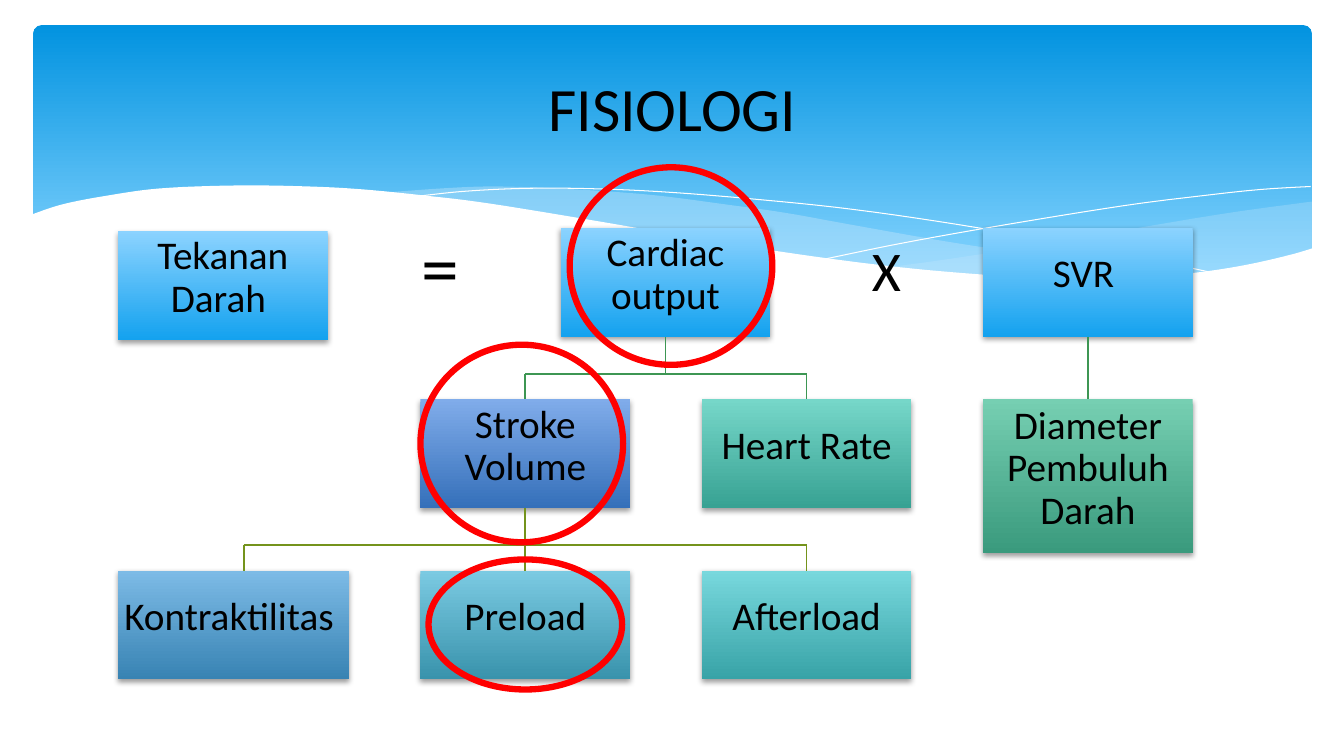
from itertools import chain
from lxml import etree
from pptx import Presentation
from pptx.dml.color import RGBColor
from pptx.enum.shapes import MSO_CONNECTOR as Connector, MSO_SHAPE as Preset
from pptx.enum.text import MSO_ANCHOR as Anchor, PP_ALIGN as Align
from pptx.oxml.ns import qn
from pptx.util import Pt

PX = 9144  # 100 px to the inch
FONT = "Calibri"
BLACK = RGBColor(0, 0, 0)
WHITE = RGBColor(255, 255, 255)
RED = RGBColor(255, 0, 0)
PALE = RGBColor(0xC6, 0xE7, 0xFC)
GREEN = RGBColor(0x3D, 0x96, 0x53)
OLIVE = RGBColor(0x74, 0x93, 0x1C)
SKY = (RGBColor(0x02, 0x93, 0xE0), RGBColor(0x83, 0xD3, 0xFE))
AZURE = (RGBColor(0x8C, 0xD3, 0xFF), RGBColor(0x14, 0xA2, 0xEF))
INDIGO = (RGBColor(0x80, 0xAC, 0xEA), RGBColor(0x35, 0x70, 0xBA))
STEEL = (RGBColor(0x7D, 0xBB, 0xE6), RGBColor(0x38, 0x83, 0xB3))
TEAL = (RGBColor(0x7B, 0xCA, 0xE2), RGBColor(0x39, 0x93, 0xAC))
CYAN = (RGBColor(0x78, 0xD8, 0xDD), RGBColor(0x38, 0xA3, 0xA7))
AQUA = (RGBColor(0x76, 0xD7, 0xC9), RGBColor(0x38, 0xA2, 0x93))
MINT = (RGBColor(0x76, 0xCF, 0xB2), RGBColor(0x3A, 0x9A, 0x7D))

TITLE = "FISIOLOGI"
BOX_W, BOX_H = 208, 108
ROWS = (226, 396, 566)
LEFT, STROKE_X, CARDIAC_X, RATE_X, SVR_X = 117, 417, 556, 696, 975
BOXES = {  # text: (x, y, width, height, gradient)
    "Tekanan Darah ": (LEFT, 229, BOX_W, BOX_H, AZURE),
    "Cardiac output": (CARDIAC_X, ROWS[0], BOX_W, BOX_H, AZURE),
    "Stroke Volume": (STROKE_X, ROWS[1], BOX_W, BOX_H, INDIGO),
    "Kontraktilitas ": (LEFT, ROWS[2], 229, BOX_H, STEEL),
    "Preload": (STROKE_X, ROWS[2], BOX_W, BOX_H, TEAL),
    "Afterload": (RATE_X, ROWS[2], BOX_W, BOX_H, CYAN),
    "Heart Rate": (RATE_X, ROWS[1], BOX_W, BOX_H, AQUA),
    "SVR ": (SVR_X, ROWS[0], BOX_W, BOX_H, AZURE),
    "Diameter Pembuluh Darah": (SVR_X, ROWS[1], BOX_W, 153, MINT),
}
BRANCHES = [  # parent, colour, {child: x where its line lands}
    ("SVR ", GREEN, {"Diameter Pembuluh Darah": 1079}),
    ("Cardiac output", GREEN, {"Stroke Volume": 521, "Heart Rate": 800}),
    ("Stroke Volume", OLIVE,
     {"Kontraktilitas ": 242, "Preload": 521, "Afterload": 800}),
]
BUS_DROP = 37
OPERATORS = [("=", 54, 408, 213, 78, 101), ("X", 40, 855, 229, 64, 77)]
RINGS = [(425, 555, 192, 129), (565, 166, 201, 196), (417, 342, 201, 196)]

RIGHT_BAND = [
    [(1301, 200), (1227, 210), (1147, 223), (1038, 242), (941, 257), (882, 265)],
    [(882, 265), (940, 271), (1009, 276), (1071, 278), (1138, 276), (1196, 270),
     (1247, 262), (1284, 252), (1301, 247)],
]
MIDDLE_BAND = [
    [(382, 191), (437, 187), (482, 185), (532, 186), (589, 189), (652, 194),
     (721, 203), (778, 211), (839, 222), (941, 240), (1034, 254), (1116, 265),
     (1190, 273)],
    [(1190, 273), (1131, 277), (1061, 278), (981, 275), (907, 268), (824, 258),
     (755, 248), (654, 232), (569, 216), (511, 207), (456, 199), (382, 191)],
]
LONG_LINE = [[(412, 195), (458, 190), (516, 187), (577, 187), (652, 190),
              (742, 197), (848, 208), (970, 226), (1108, 251), (1210, 272)]]
RIGHT_LINE = [[(818, 257), (896, 241), (997, 223), (1115, 204), (1194, 194),
               (1250, 188), (1300, 185)]]
WHITE_WAVE = [
    [(31, 213), (61, 203), (101, 195), (158, 187), (235, 184), (306, 185),
     (361, 188), (421, 194), (486, 202), (596, 220), (706, 239), (804, 254),
     (891, 265), (969, 272), (1037, 276), (1097, 277), (1151, 274), (1198, 269),
     (1240, 262), (1279, 253), (1303, 246)],
    [(1303, 329), (31, 329)],
]
WAVES = [  # curves, fill, opacity in percent; no fill means a thin white line
    (RIGHT_BAND, PALE, 29), (MIDDLE_BAND, PALE, 40), (LONG_LINE, None, 100),
    (RIGHT_LINE, None, 100), (WHITE_WAVE, WHITE, 100),
]


def emu(*lengths):
    return [round(length * PX) for length in lengths]


def smooth(knots, steps=6):
    """Points of a Catmull-Rom curve through the knots."""
    padded = [knots[0], *knots, knots[-1]]
    points = [knots[0]]
    for a, b, c, d in zip(padded, padded[1:], padded[2:], padded[3:]):
        for step in range(1, steps + 1):
            t = step / steps
            points.append(tuple(
                (2 * q + (r - p) * t + (2 * p - 5 * q + 4 * r - s) * t ** 2
                 + (3 * q - p - 3 * r + s) * t ** 3) / 2
                for p, q, r, s in zip(a, b, c, d)))
    return points


def fill_gradient(shape, colours, end=1.0):
    shape.fill.gradient()
    shape.fill.gradient_angle = 270
    for stop, colour, position in zip(shape.fill.gradient_stops, colours, (0, end)):
        stop.color.rgb = colour
        stop.position = position


def add_plain(preset, *frame):
    shape = slide.shapes.add_shape(preset, *emu(*frame))
    shape.shadow.inherit = False
    shape.line.fill.background()
    return shape


def add_wave(curves, colour, opacity):
    outline = [emu(*point) for point in chain.from_iterable(map(smooth, curves))]
    builder = shapes.build_freeform(*outline[0], scale=1.0)
    builder.add_line_segments(outline[1:], close=colour is not None)
    wave = builder.convert_to_shape()
    wave.shadow.inherit = False
    if colour is None:
        wave.fill.background()
        wave.line.color.rgb = WHITE
        wave.line.width = Pt(0)
        return
    wave.line.fill.background()
    wave.fill.solid()
    wave.fill.fore_color.rgb = colour
    tint = wave._element.spPr.find(f"{qn('a:solidFill')}/{qn('a:srgbClr')}")
    etree.SubElement(tint, qn("a:alpha"), val=str(opacity * 1000))


def write(frame, text, size, align):
    frame.word_wrap = True
    paragraph = frame.paragraphs[0]
    paragraph.text = text
    paragraph.alignment = align
    paragraph.font.name = FONT
    paragraph.font.size = Pt(size)
    paragraph.font.color.rgb = BLACK
    return paragraph


def add_box(text, x, y, width, height, colours):
    box = add_plain(Preset.RECTANGLE, x, y, width, height)
    fill_gradient(box, colours)
    shadow = etree.SubElement(box._element.spPr.find(qn("a:effectLst")),
                              qn("a:outerShdw"), blurRad=str(Pt(4)),
                              dist=str(Pt(2)), dir="5400000", rotWithShape="0")
    shade = etree.SubElement(shadow, qn("a:srgbClr"), val="000000")
    etree.SubElement(shade, qn("a:alpha"), val="38000")
    frame = box.text_frame
    frame.margin_left, frame.margin_top, frame.margin_right, frame.margin_bottom = emu(1, 1, 1, 15)
    frame.vertical_anchor = Anchor.MIDDLE
    write(frame, text, 28, Align.CENTER).line_spacing = 0.9
    return box


def add_line(colour, *ends):
    line = shapes.add_connector(Connector.STRAIGHT, *emu(*ends))
    line.line.color.rgb = colour
    line.line.width = Pt(1.25)
    etree.SubElement(line._element.spPr, qn("a:effectLst"))
    return line


def add_branch(parent, colour, children):
    x, y, width, height, _ = BOXES[parent]
    middle, bottom = x + width // 2, y + height
    bus = bottom + BUS_DROP
    add_line(colour, middle, bottom, middle, bus).begin_connect(boxes[parent], 2)
    if len(children) > 1:
        add_line(colour, min(children.values()), bus, max(children.values()), bus)
    for child, landing in children.items():
        left, top, child_width, *_ = BOXES[child]
        drop = add_line(colour, landing, bus, landing, top)
        if landing == left + child_width // 2:
            drop.end_connect(boxes[child], 0)


prs = Presentation()
prs.slide_width, prs.slide_height = emu(1333, 750)
slide = prs.slides.add_slide(prs.slide_layouts[5])
shapes = slide.shapes

banner = add_plain(Preset.ROUNDED_RECTANGLE, 33, 25, 1268, 270)
banner.adjustments[0] = 0.03
fill_gradient(banner, SKY, 0.9)
for wave_parts in WAVES:
    add_wave(*wave_parts)

title = shapes.title
title.left, title.top, title.width, title.height = emu(67, 37, 1200, 137)
title.text_frame.vertical_anchor = Anchor.MIDDLE
write(title.text_frame, TITLE, 44, Align.CENTER)
shapes._spTree.append(title._element)

boxes = {text: add_box(text, *layout) for text, layout in BOXES.items()}
for branch in BRANCHES:
    add_branch(*branch)
for sign, size, *place in OPERATORS:
    write(shapes.add_textbox(*emu(*place)).text_frame, sign, size, Align.LEFT)
for place in RINGS:
    ring = add_plain(Preset.OVAL, *place)
    ring.fill.background()
    ring.line.color.rgb = RED
    ring.line.width = Pt(4.5)

prs.save("out.pptx")
